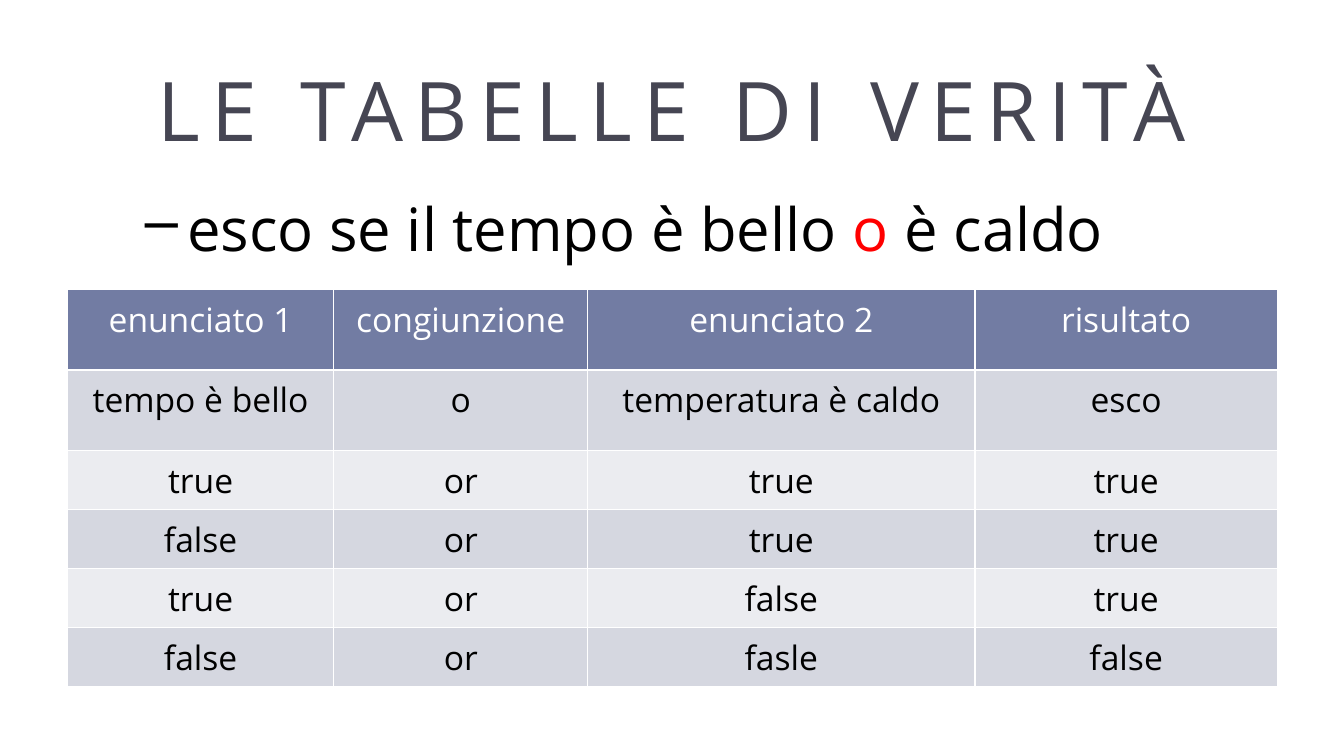
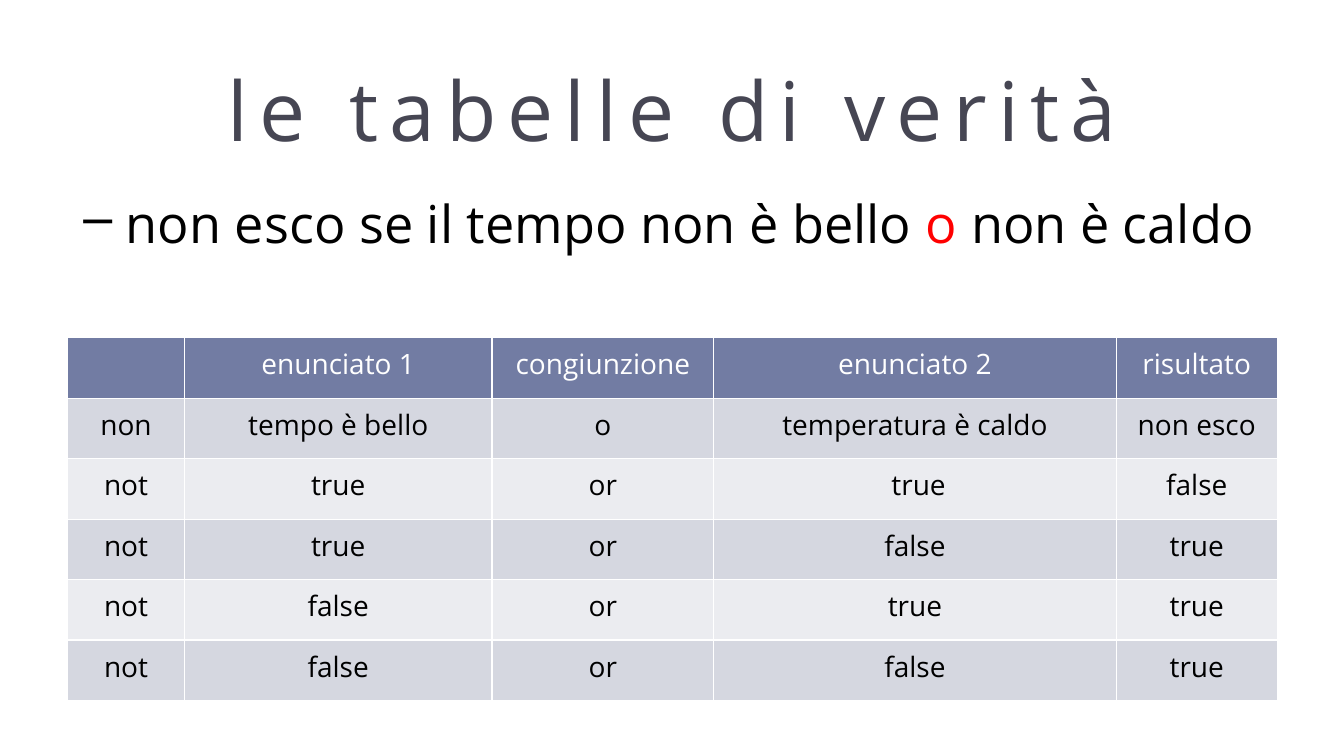
import pptx
import pptx.util
import pptx.dml.color
import pptx.enum.text
import pptx.oxml
import pptx.oxml.ns

PX = 9144  # EMU in one px, 100 px to the inch
FONT = "Open Sans"
INK, SLATE, RED, WHITE = "000000", "464653", "FF0000", "FFFFFF"
HEAD, BANDS = "727CA3", ("D5D7E0", "EBECF0")
CENTER = pptx.enum.text.PP_ALIGN.CENTER
MIDDLE = pptx.enum.text.MSO_ANCHOR.MIDDLE
FIT = pptx.enum.text.MSO_AUTO_SIZE
TITLE_BOX = (67, 60, 1200, 95)


def px(num):
    return pptx.util.Emu(num * PX)


def hue(code):
    return pptx.dml.color.RGBColor.from_string(code)


def style(item, vals):
    for key, val in vals.items():
        setattr(item, key, val)


def add_run(para, text, size, code):
    run = para.add_run()
    run.text = text
    style(run.font, {"name": FONT, "size": pptx.util.Pt(size)})
    run.font.color.rgb = hue(code)
    return run


def put_title(slide, box, text):
    title = slide.shapes.title
    style(title, dict(zip(("left", "top", "width", "height"), map(px, box))))
    frame = title.text_frame
    style(frame, {"auto_size": FIT.NONE, "word_wrap": True,
                  "vertical_anchor": MIDDLE})
    para = frame.paragraphs[0]
    para.alignment = CENTER
    run = add_run(para, text, 58.7, SLATE)
    run.font._element.set("spc", "800")  # letter spacing of 8 pt


def put_claim(slide, box, parts, size):
    frame = slide.shapes.add_textbox(*map(px, box)).text_frame
    style(frame, {"word_wrap": True, "auto_size": FIT.SHAPE_TO_FIT_TEXT})
    para = frame.paragraphs[0]
    para.level = 1
    # Dash bullet with a hanging indent
    props = para._p.get_or_add_pPr()
    props.set("marL", str(px(108)))
    props.set("indent", str(px(-42)))
    props.append(pptx.oxml.parse_xml(
        f'<a:buChar {pptx.oxml.ns.nsdecls("a")} char="–"/>'))
    for text, code in parts:
        add_run(para, text, size, code)


def edge_cell(cell):
    # Thin white lines go before the fill in the cell properties
    props = cell._tc.get_or_add_tcPr()
    for spot, side in enumerate("LRTB"):
        props.insert(spot, pptx.oxml.parse_xml(
            f'<a:ln{side} {pptx.oxml.ns.nsdecls("a")} w="12700"><a:solidFill>'
            f'<a:srgbClr val="{WHITE}"/></a:solidFill></a:ln{side}>'))


def put_table(slide, box, cols, rows, data, size):
    table = slide.shapes.add_table(len(rows), len(cols), *map(px, box)).table
    for col, width in zip(table.columns, cols):
        col.width = px(width)
    for row, height in zip(table.rows, rows):
        row.height = px(height)
    for r, line in enumerate(data):
        fill = BANDS[(r - 1) % 2] if r else HEAD
        for c, text in enumerate(line):
            cell = table.cell(r, c)
            style(cell, {"margin_left": px(13), "margin_right": px(13),
                         "margin_top": px(7), "margin_bottom": px(6)})
            cell.fill.solid()
            cell.fill.fore_color.rgb = hue(fill)
            edge_cell(cell)
            para = cell.text_frame.paragraphs[0]
            para.alignment = CENTER
            if text:
                add_run(para, text, size, INK if r else WHITE)


def truth_slide(deck, title, claim, table):
    slide = deck.slides.add_slide(deck.slide_layouts[5])
    put_title(slide, TITLE_BOX, title)
    put_table(slide, **table)
    put_claim(slide, **claim)


SLIDES = [
    {
        "title": "LE TABELLE DI VERITÀ",
        "claim": {
            "box": (68, 185, 1197, 82), "size": 42.7,
            "parts": [("esco se il tempo è bello ", INK), ("o", RED),
                      (" è caldo", INK)]},
        "table": {
            "box": (67, 287, 1200, 392), "size": 24,
            "cols": (264, 252, 384, 300), "rows": (80, 80) + (58,) * 4,
            "data": [
                ("enunciato 1", "congiunzione", "enunciato 2", "risultato"),
                ("tempo è bello", "o", "temperatura è caldo", "esco"),
                ("true", "or", "true", "true"),
                ("false", "or", "true", "true"),
                ("true", "or", "false", "true"),
                ("false", "or", "fasle", "false")]},
    },
    {
        "title": "le tabelle di verità",
        "claim": {
            "box": (7, 185, 1273, 73), "size": 37.3,
            "parts": [("non esco se il tempo non è bello ", INK),
                      ("o ", RED), ("non è caldo", INK)]},
        "table": {
            "box": (67, 335, 1200, 360), "size": 20,
            "cols": (116, 305, 220, 399, 160), "rows": (60,) * 6,
            "data": [
                ("", "enunciato 1", "congiunzione", "enunciato 2",
                 "risultato"),
                ("non", "tempo è bello", "o", "temperatura è caldo",
                 "non esco"),
                ("not", "true", "or", " true", "false"),
                ("not", "true", "or", "false", "true"),
                ("not", "false", "or", "true", "true"),
                ("not", "false", "or", "false", "true")]},
    },
]


def main():
    deck = pptx.Presentation()
    style(deck, {"slide_width": px(1333), "slide_height": px(750)})
    for parts in SLIDES:
        truth_slide(deck, **parts)
    deck.save("out.pptx")


if __name__ == "__main__":
    main()
